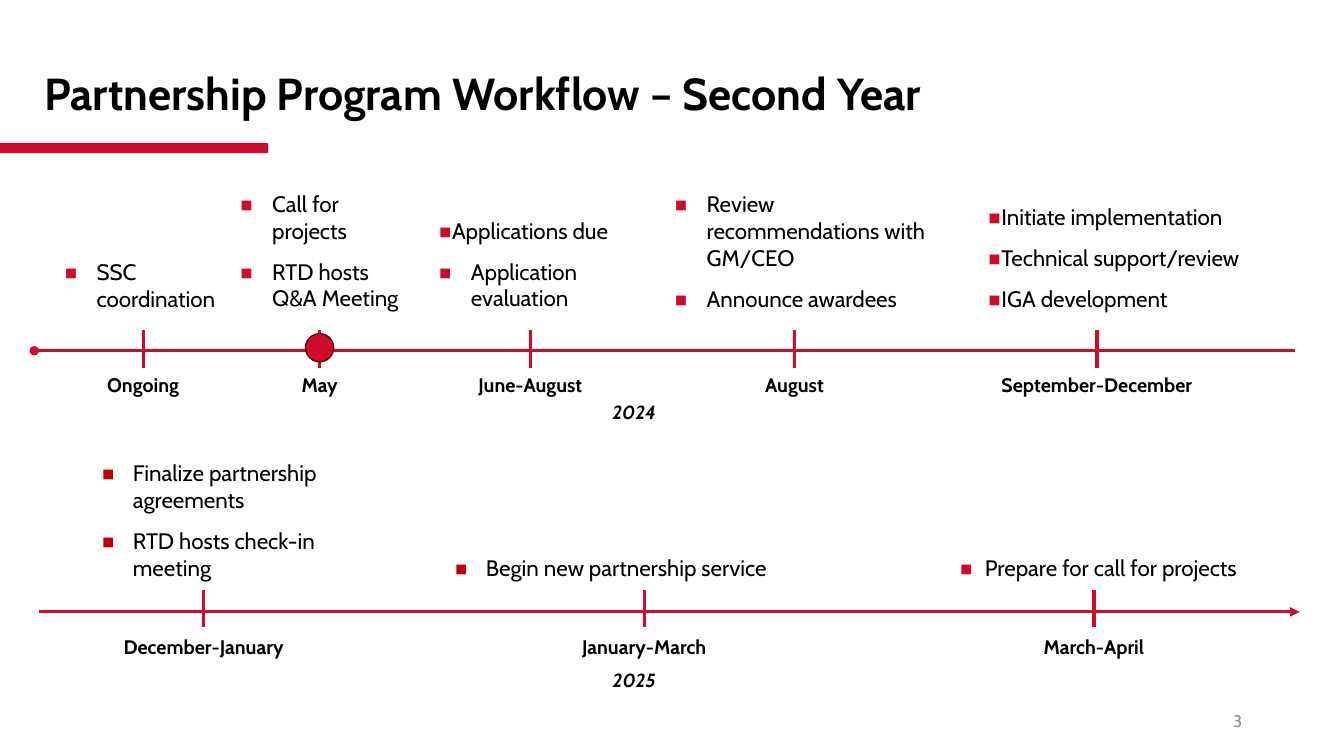
"""Build the second-year partnership workflow slide with two timelines."""
from dataclasses import dataclass
from typing import Any, NamedTuple, Optional

from lxml import etree
from pptx import Presentation
from pptx.dml.color import RGBColor
from pptx.enum.shapes import MSO_CONNECTOR, MSO_SHAPE
from pptx.enum.text import MSO_ANCHOR, MSO_AUTO_SIZE, PP_ALIGN
from pptx.oxml.ns import qn
from pptx.util import Inches, Pt

LINE = MSO_CONNECTOR.STRAIGHT
RECT, OVAL = MSO_SHAPE.RECTANGLE, MSO_SHAPE.OVAL
TOP, MID, LOW = MSO_ANCHOR.TOP, MSO_ANCHOR.MIDDLE, MSO_ANCHOR.BOTTOM
LEFT, CENTER, RIGHT = PP_ALIGN.LEFT, PP_ALIGN.CENTER, PP_ALIGN.RIGHT
FIXED = MSO_AUTO_SIZE.NONE


@dataclass(frozen=True)
class Theme:
    font: str = "Cabin"
    red: str = "CF0A2C"
    brick: str = "C00000"
    wine: str = "5B0413"
    ink: str = "000000"
    gray: str = "8C8C8C"
    white: str = "FFFFFF"
    title: float = 32
    body: float = 16
    label: float = 14
    year: float = 13.6
    page: float = 12
    gap: float = 10
    rule: float = 2.25


class Box(NamedTuple):
    x: float
    y: float
    w: float
    h: float


class Item(NamedTuple):
    text: str
    left: float = 0.32
    hang: float = 0.32


class Stage(NamedTuple):
    x: float
    label: str
    width: float
    height: float
    box: Box
    items: tuple[Item, ...]
    mark: str = "CF0A2C"
    holder: Optional[int] = None


class Track(NamedTuple):
    start: float
    stop: float
    y: float
    head: float
    foot: float
    label: float
    cap: tuple[str, str]
    year: str
    ytop: float
    stages: tuple[Stage, ...]


THEME = Theme()
TIGHT = (0.06, 0.31)
WIDE = (0.31, 0.31)
TRACKS = (
    Track(0.34, 12.84, 3.48, 3.27, 3.65, 3.65, ("headEnd", "oval"), "2024", 3.97, (
        Stage(1.42, "Ongoing", 1.97, 0.51, Box(0.54, 2.5, 1.77, 0.64),
              (Item("SSC coordination"),)),
        Stage(3.17, "May", 1.01, 0.29, Box(2.28, 1.84, 1.81, 1.3),
              (Item("Call for projects"), Item("RTD hosts Q&A Meeting")), holder=1),
        Stage(5.26, "June-August", 1.59, 0.37, Box(4.25, 2.1, 2.19, 1.04),
              (Item("Applications due", *TIGHT), Item("Application evaluation")), holder=2),
        Stage(7.88, "August", 1.59, 0.29, Box(6.59, 1.75, 2.95, 1.39),
              (Item("Review recommendations with GM/CEO"), Item("Announce awardees"))),
        Stage(10.88, "September-December", 2.57, 0.53, Box(9.7, 1.91, 2.95, 1.23),
              (Item("Initiate implementation", *TIGHT),
               Item("Technical support/review", *TIGHT),
               Item("IGA development", *TIGHT))),
    )),
    Track(0.39, 12.89, 6.07, 5.85, 6.22, 6.25, ("tailEnd", "triangle"), "2025", 6.63, (
        Stage(2.02, "December-January", 2.47, 0.49, Box(0.91, 4.76, 2.6, 1.05),
              (Item("Finalize partnership agreements", *WIDE),
               Item("RTD hosts check-in meeting", *WIDE)), THEME.brick),
        Stage(6.39, "January-March", 2.01, 0.73, Box(4.41, 4.48, 3.89, 1.33),
              (Item("Begin new partnership service", *WIDE),), THEME.brick),
        Stage(10.85, "March-April", 1.61, 0.41, Box(9.42, 4.68, 3.89, 1.13),
              (Item("Prepare for call for projects", 0.25, 0.25),)),
    )),
)


def color(code: str) -> RGBColor:
    return RGBColor.from_string(code)


def place(shape: Any, box: Box) -> None:
    shape.left, shape.top, shape.width, shape.height = map(Inches, box)


def setup(shape: Any, anchor: Any) -> Any:
    frame = shape.text_frame
    frame.word_wrap = True
    frame.auto_size = FIXED
    frame.vertical_anchor = anchor
    return frame


def write(para: Any, text: str, size: float, tint: str = THEME.ink, align: Any = LEFT,
          bold: bool = False, slant: bool = False, space: float = 1.0) -> None:
    para.alignment = align
    para.line_spacing = space
    para.space_before = para.space_after = Pt(0)
    run = para.add_run()
    run.text = text
    font = run.font
    font.name, font.size, font.bold, font.italic = THEME.font, Pt(size), bold, slant
    font.color.rgb = color(tint)


def bullet(para: Any, item: Item, tint: str) -> None:
    props = para._p.get_or_add_pPr()
    props.set("marL", str(Inches(item.left)))
    props.set("indent", str(-Inches(item.hang)))
    paint = etree.SubElement(props, qn("a:buClr"))
    etree.SubElement(paint, qn("a:srgbClr"), val=tint)
    etree.SubElement(props, qn("a:buSzPct"), val="150000")
    etree.SubElement(props, qn("a:buFont"), typeface=THEME.font)
    etree.SubElement(props, qn("a:buChar"), char="▪")


def textbox(slide: Any, box: Box) -> Any:
    return slide.shapes.add_textbox(*map(Inches, box))


def block(slide: Any, kind: Any, box: Box, fill: str, edge: Optional[str] = None) -> Any:
    shape = slide.shapes.add_shape(kind, *map(Inches, box))
    shape.shadow.inherit = False
    shape.fill.solid()
    shape.fill.fore_color.rgb = color(fill)
    if edge:
        shape.line.color.rgb = color(edge)
        shape.line.width = Pt(1)
    else:
        shape.line.fill.background()
    return shape


def stroke(slide: Any, x1: float, y1: float, x2: float, y2: float) -> Any:
    line = slide.shapes.add_connector(LINE, *map(Inches, (x1, y1, x2, y2)))
    line.line.color.rgb = color(THEME.red)
    line.line.width = Pt(THEME.rule)
    etree.SubElement(line._element.spPr, qn("a:effectLst"))
    return line


def draw_stage(slide: Any, track: Track, stage: Stage) -> None:
    if stage.holder is None:
        shape = textbox(slide, stage.box)
    else:
        shape = slide.placeholders[stage.holder]
        place(shape, stage.box)
    frame = setup(shape, LOW)
    for num, item in enumerate(stage.items):
        para = frame.add_paragraph() if num else frame.paragraphs[0]
        bullet(para, item, stage.mark)
        write(para, item.text, THEME.body)
        if num:
            para.space_before = Pt(THEME.gap)
    label = textbox(slide, Box(stage.x - stage.width / 2, track.label,
                               stage.width, stage.height))
    write(setup(label, TOP).paragraphs[0], stage.label, THEME.label, align=CENTER, bold=True)
    tick = stroke(slide, stage.x, track.foot, stage.x, track.head)
    if track.foot == track.label:
        tick.begin_connect(label, 0)


def draw_track(slide: Any, track: Track) -> None:
    axis = stroke(slide, track.start, track.y, track.stop, track.y)
    end, kind = track.cap
    etree.SubElement(axis.line._get_or_add_ln(), qn(f"a:{end}"), type=kind)
    for stage in track.stages:
        draw_stage(slide, track, stage)
    year = block(slide, RECT, Box(5.92, track.ytop, 0.74, 0.29), THEME.white)
    write(setup(year, TOP).paragraphs[0], track.year, THEME.year, align=CENTER,
          bold=True, slant=True, space=0.8)


def main() -> None:
    deck = Presentation()
    deck.slide_width, deck.slide_height = Inches(13.33), Inches(7.5)
    slide = deck.slides.add_slide(deck.slide_layouts.get_by_name("Two Content"))
    block(slide, RECT, Box(0, 1.42, 2.66, 0.1), THEME.red)
    title = slide.shapes.title
    place(title, Box(0.34, 0.23, 11.5, 1.45))
    write(setup(title, MID).paragraphs[0], "Partnership Program Workflow – Second Year",
          THEME.title, bold=True, space=0.9)
    for track in TRACKS:
        draw_track(slide, track)
    block(slide, OVAL, Box(3.03, 3.31, 0.28, 0.28), THEME.red, THEME.wine)
    page = textbox(slide, Box(9.42, 6.95, 3, 0.4))
    write(setup(page, MID).paragraphs[0], "3", THEME.page, THEME.gray, RIGHT)
    deck.save("out.pptx")


if __name__ == "__main__":
    main()
